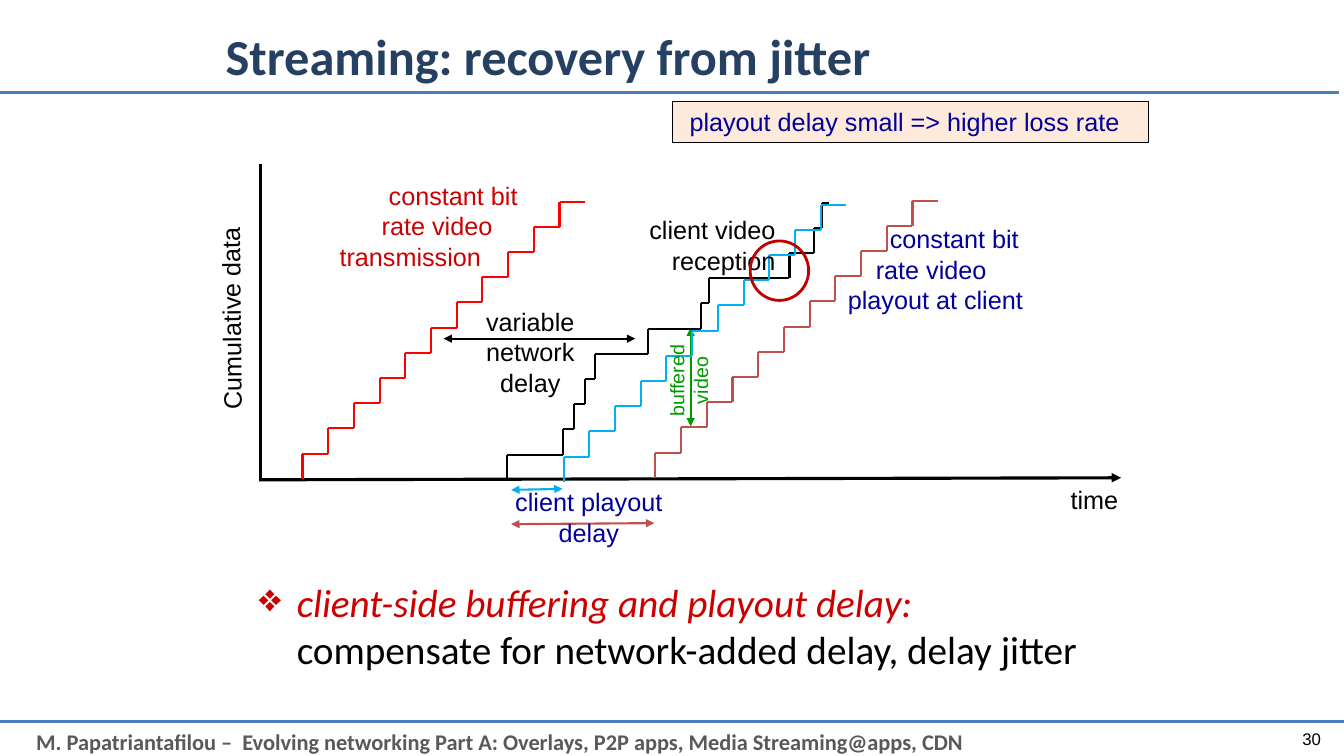
from dataclasses import dataclass
from itertools import repeat
from typing import Iterable

from lxml.etree import SubElement
from pptx import Presentation
from pptx.dml.color import RGBColor
from pptx.enum.shapes import MSO_CONNECTOR, MSO_SHAPE
from pptx.enum.text import MSO_ANCHOR, PP_ALIGN
from pptx.oxml.ns import qn
from pptx.util import Inches, Length, Pt

CELL = 0.25  # inches per grid column and row
COLUMNS, ROWS = 53.32, 30

COLORS = {
    "rule": "4B7EBC",
    "title": "254061",
    "footer": "595959",
    "black": "000000",
    "sent": "FF0000",
    "early": "00B0F0",
    "late": "C0504D",
    "buffer": "009900",
    "crimson": "CC0000",
    "navy": "000099",
    "peach": "FDEADA",
    "ring": "C00000",
}


@dataclass(frozen=True)
class Stroke:
    start: tuple[float, float]
    end: tuple[float, float]
    color: str
    points: float = 1.5
    head: bool = False
    tail: bool = False


@dataclass(frozen=True)
class Staircase:
    column: float
    base: float
    color: str
    treads: Iterable[float]


@dataclass(frozen=True)
class Label:
    box: tuple[float, float, float, float]
    lines: tuple[str, ...]
    color: str
    size: float = 18
    font: str = "Arial"
    bold: bool = False
    align: PP_ALIGN = PP_ALIGN.LEFT
    anchor: MSO_ANCHOR = MSO_ANCHOR.TOP
    indents: tuple[float, ...] = ()
    rotation: float = 0
    wrap: bool = True
    fill: str = ""


def grid(cells: float) -> Length:
    return Inches(cells * CELL)


def rgb(name: str) -> RGBColor:
    return RGBColor.from_string(COLORS[name])


def draw_stroke(shapes, stroke: Stroke) -> None:
    ends = map(grid, (*stroke.start, *stroke.end))
    connector = shapes.add_connector(MSO_CONNECTOR.STRAIGHT, *ends)
    connector.line.color.rgb = rgb(stroke.color)
    connector.line.width = Pt(stroke.points)
    outline = connector.line._get_or_add_ln()
    for tag, wanted in (("a:headEnd", stroke.head), ("a:tailEnd", stroke.tail)):
        if wanted:
            SubElement(outline, qn(tag), type="triangle")
    SubElement(connector._element.spPr, qn("a:effectLst"))


def draw_staircase(shapes, stairs: Staircase) -> None:
    """Climb one grid row before each tread."""
    x, y = stairs.column, stairs.base
    for tread in stairs.treads:
        draw_stroke(shapes, Stroke((x, y - 1), (x, y), stairs.color))
        y -= 1
        draw_stroke(shapes, Stroke((x + tread, y), (x, y), stairs.color))
        x += tread


def style_run(run, font: str, size: float, color: str, bold=False, italic=False) -> None:
    run.font.name = font
    run.font.size = Pt(size)
    run.font.color.rgb = rgb(color)
    run.font.bold = bold
    run.font.italic = italic


def draw_label(shapes, label: Label) -> None:
    box = shapes.add_textbox(*map(grid, label.box))
    box.rotation = label.rotation
    if label.fill:
        box.fill.solid()
        box.fill.fore_color.rgb = rgb(label.fill)
        box.line.color.rgb = rgb("black")
        box.line.width = Pt(0.75)
    frame = box.text_frame
    frame.text = "\n".join(label.lines)
    frame.word_wrap = label.wrap
    frame.vertical_anchor = label.anchor
    for paragraph in frame.paragraphs:
        paragraph.alignment = label.align
        style_run(paragraph.runs[0], label.font, label.size, label.color, label.bold)
    for paragraph, indent in zip(frame.paragraphs, label.indents):
        paragraph._p.get_or_add_pPr().set("marL", str(grid(indent)))


def draw_conclusion(shapes) -> None:
    frame = shapes.add_textbox(*map(grid, (9.88, 22.76, 34, 3.88))).text_frame
    frame.word_wrap = True
    point = frame.paragraphs[0]
    point.text = "client-side buffering and playout delay: "
    point.space_before = Pt(5.6)
    style_run(point.runs[0], "Calibri", 28, "crimson", italic=True)
    explanation = point.add_run()
    explanation.text = "compensate for network-added delay, delay jitter"
    style_run(explanation, "Calibri", 28, "black")
    properties = point._p.get_or_add_pPr()
    properties.set("marL", str(grid(1.5)))
    properties.set("indent", str(-grid(1.5)))
    SubElement(properties, qn("a:buChar"), char="❖")


def draw_loss_ring(shapes) -> None:
    ring = shapes.add_shape(MSO_SHAPE.OVAL, *map(grid, (29.76, 9.56, 2.32, 2.36)))
    ring.shadow.inherit = False
    ring.fill.background()
    ring.line.color.rgb = rgb("ring")
    ring.line.width = Pt(2)


STEPS = 11
STEADY_TREAD = 1.02
RECEPTION_TREADS = (2.2, 0.44, 0.44, 0.4, 2.12, 2.08, 0.32, 3.2, 0.96, 0.32, 0.28)

STROKES = (
    Stroke((0, 28.64), (COLUMNS, 28.64), "rule", 2.25),
    Stroke((0, 3.68), (53.12, 3.68), "rule", 2.25),
    Stroke((10.32, 6.52), (10.32, 19), "black", 2.25),
    Stroke((44.48, 18.96), (10.28, 19.04), "black", 2.25, head=True),
    Stroke((17.6, 13.44), (25.2, 13.44), "black", head=True, tail=True),
    Stroke((20.28, 20.8), (25.96, 20.76), "late", head=True, tail=True),
    Stroke((20.28, 19.44), (22.32, 19.4), "early", head=True, tail=True),
    Stroke((27.4, 16.92), (27.4, 13), "buffer", head=True, tail=True),
)

STAIRCASES = (
    Staircase(12, 19, "sent", repeat(STEADY_TREAD, STEPS)),
    Staircase(20.12, 19.04, "black", RECEPTION_TREADS),
    Staircase(26, 18.96, "late", repeat(STEADY_TREAD, STEPS)),
    Staircase(22.36, 19.12, "early", repeat(STEADY_TREAD, STEPS)),
)

LABELS = (
    Label((8.56, 1.32, 35.36, 1.72), ("Streaming: recovery from jitter",), "title", 36,
          "Calibri", True, anchor=MSO_ANCHOR.MIDDLE),
    Label((1.04, 28.68, 52.28, 1.48),
          ("M. Papatriantafilou –  Evolving networking Part A: Overlays, P2P apps, "
           "Media Streaming@apps, CDN",), "footer", 16, "Calibri", True),
    Label((48.52, 28.52, 4.28, 1.6), ("30",), "black", 12, align=PP_ALIGN.RIGHT,
          anchor=MSO_ANCHOR.MIDDLE),
    Label((13.08, 6.96, 8.16, 4.04), ("constant bit", "rate video", "transmission"),
          "crimson", indents=(1.95, 1.67, 0)),
    Label((4.88, 11.56, 8.56, 1.6), ("Cumulative data",), "black", rotation=269.4),
    Label((42.08, 19.04, 2.72, 1.6), ("time",), "black", wrap=False),
    Label((18.84, 11.96, 4.4, 4.04), ("variable", "network", "delay"), "black",
          align=PP_ALIGN.CENTER),
    Label((25.28, 8.32, 5.88, 2.84), ("client video", "reception"), "black",
          align=PP_ALIGN.RIGHT),
    Label((32.96, 8.68, 8.36, 4.04), ("constant bit", "rate video", "playout at client"),
          "navy", indents=(1.95, 1.39, 0.28)),
    Label((19.68, 19.12, 7.36, 2.8), ("client playout", "delay"), "navy",
          align=PP_ALIGN.CENTER),
    Label((25.48, 13.96, 3.68, 2.28), ("buffered", "video"), "buffer", 14,
          align=PP_ALIGN.CENTER, rotation=270, wrap=False),
    Label((26.68, 4.04, 18.88, 1.6), ("playout delay small => higher loss rate",), "navy",
          indents=(0.28,), fill="peach"),
)


def main() -> None:
    deck = Presentation()
    deck.slide_width, deck.slide_height = grid(COLUMNS), grid(ROWS)
    shapes = deck.slides.add_slide(deck.slide_layouts[6]).shapes
    for stroke in STROKES:
        draw_stroke(shapes, stroke)
    for stairs in STAIRCASES:
        draw_staircase(shapes, stairs)
    for label in LABELS:
        draw_label(shapes, label)
    draw_conclusion(shapes)
    draw_loss_ring(shapes)
    deck.save("out.pptx")


if __name__ == "__main__":
    main()
